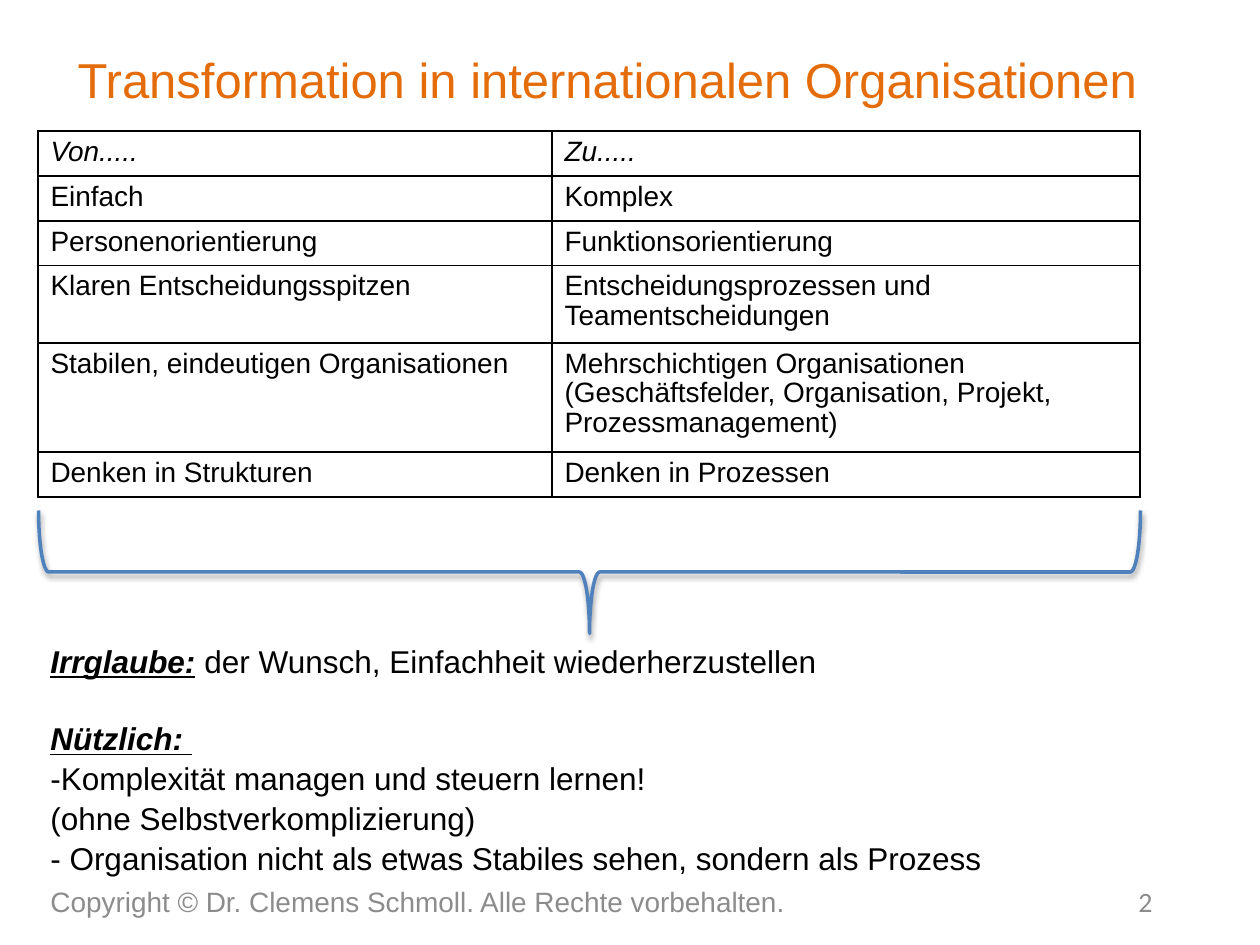
import pptx
import pptx.util
import pptx.oxml
from lxml import etree
from pptx.dml.color import RGBColor
from pptx.enum.shapes import MSO_SHAPE
from pptx.enum.text import MSO_ANCHOR, PP_ALIGN
from pptx.oxml.ns import nsdecls

PX = 914400 // 126
ORANGE = RGBColor(0xE4, 0x6C, 0x0A)
GRAY = RGBColor(0x8C, 0x8C, 0x8C)
BLACK = RGBColor(0, 0, 0)
BLUE = RGBColor(0x4F, 0x81, 0xBD)

LEFT, WIDTH = 38, 1102
TITLE = "Transformation in internationalen Organisationen "
COPYRIGHT = "Copyright © Dr. Clemens Schmoll. Alle Rechte vorbehalten."
PAGE_NUMBER = "2"
COLUMN_WIDTHS = [514, 588]
ROWS = [
    (40, "Von.....", "Zu....."),
    (40, "Einfach", "Komplex"),
    (40, "Personenorientierung", "Funktionsorientierung"),
    (71, "Klaren Entscheidungsspitzen", "Entscheidungsprozessen und Teamentscheidungen"),
    (100, "Stabilen, eindeutigen Organisationen",
     "Mehrschichtigen Organisationen\n"
     "(Geschäftsfelder, Organisation, Projekt, Prozessmanagement)"),
    (40, "Denken in Strukturen", "Denken in Prozessen"),
]
# Each conclusion: emphasised lead, plain text, space before in points
CONCLUSIONS = [
    ("Irrglaube:", " der Wunsch, Einfachheit wiederherzustellen", 0),
    ("Nützlich: ", "", 21.6),
    ("", "-Komplexität managen und steuern lernen!\v(ohne Selbstverkomplizierung)", 0),
    ("", "- Organisation nicht als etwas Stabiles sehen, sondern als Prozess", 0),
]


def px(*values):
    return [pptx.util.Emu(value * PX) for value in values]


def add_text(paragraph, text, size=16, color=BLACK, font="Arial",
             italic=False, bold=False, underline=False):
    """Append text to a paragraph; a vertical tab breaks the line."""
    for index, line in enumerate(text.split("\v")):
        if index:
            paragraph.add_line_break()
        run = paragraph.add_run()
        run.text = line
        run.font.name = font
        run.font.size = pptx.util.Pt(size)
        run.font.color.rgb = color
        run.font.italic, run.font.bold, run.font.underline = italic, bold, underline


def add_box(slide, box, anchor=MSO_ANCHOR.MIDDLE):
    frame = slide.shapes.add_textbox(*px(*box)).text_frame
    frame.word_wrap = True
    frame.vertical_anchor = anchor
    return frame


def add_line(slide, box, text, align=PP_ALIGN.LEFT, **text_format):
    paragraph = add_box(slide, box).paragraphs[0]
    paragraph.alignment = align
    add_text(paragraph, text, **text_format)


def add_borders(cell):
    properties = cell._tc.get_or_add_tcPr()
    for position, side in enumerate(("lnL", "lnR", "lnT", "lnB")):
        properties.insert(position, pptx.oxml.parse_xml(
            f'<a:{side} {nsdecls("a")} w="12700"><a:solidFill>'
            f'<a:srgbClr val="{BLACK}"/></a:solidFill></a:{side}>'))


def add_comparison(slide):
    height = sum(row[0] for row in ROWS)
    table = slide.shapes.add_table(
        len(ROWS), len(COLUMN_WIDTHS), *px(LEFT, 131, WIDTH, height)).table
    table.first_row = table.horz_banding = False
    for column, width in zip(table.columns, COLUMN_WIDTHS):
        column.width = px(width)[0]
    for row_index, (row_height, *texts) in enumerate(ROWS):
        table.rows[row_index].height = px(row_height)[0]
        for column_index, text in enumerate(texts):
            cell = table.cell(row_index, column_index)
            cell.fill.background()
            add_borders(cell)
            for index, line in enumerate(text.split("\n")):
                frame = cell.text_frame
                paragraph = frame.add_paragraph() if index else frame.paragraphs[0]
                paragraph.line_spacing = 0.96
                add_text(paragraph, line, italic=row_index == 0)


def add_brace(slide):
    """Add a right brace turned to point down from the table."""
    depth, center_x, center_y = 123, LEFT + WIDTH // 2, 572
    brace = slide.shapes.add_shape(MSO_SHAPE.RIGHT_BRACE, *px(
        center_x - depth // 2, center_y - WIDTH // 2, depth, WIDTH))
    brace.rotation = 90
    brace.fill.background()
    brace.line.color.rgb = BLUE
    brace.line.width = pptx.util.Pt(2)
    brace.shadow.inherit = False
    effects = brace._element.spPr.find(pptx.oxml.ns.qn("a:effectLst"))
    effects.append(pptx.oxml.parse_xml(
        f'<a:outerShdw {nsdecls("a")} blurRad="40000" dist="20000" dir="5400000" '
        f'rotWithShape="0"><a:srgbClr val="{BLACK}"><a:alpha val="38000"/>'
        '</a:srgbClr></a:outerShdw>'))


def add_conclusions(slide):
    frame = add_box(slide, (LEFT, 634, WIDTH, 242), MSO_ANCHOR.TOP)
    for index, (lead, text, space) in enumerate(CONCLUSIONS):
        paragraph = frame.add_paragraph() if index else frame.paragraphs[0]
        paragraph.line_spacing = 1.05
        if space:
            paragraph.space_before = pptx.util.Pt(space)
        if lead:
            add_text(paragraph, lead, size=18, italic=True, bold=True, underline=True)
        if text:
            add_text(paragraph, text, size=18)


def main():
    presentation = pptx.Presentation()
    presentation.slide_width, presentation.slide_height = px(1260, 945)
    slide = presentation.slides.add_slide(presentation.slide_layouts[6])
    add_line(slide, (63, 0, WIDTH, 158), TITLE, PP_ALIGN.CENTER, size=28, color=ORANGE)
    add_line(slide, (LEFT, 876, 801, 50), COPYRIGHT, color=GRAY)
    add_line(slide, (872, 876, 293, 50), PAGE_NUMBER, PP_ALIGN.RIGHT,
             color=GRAY, font="Calibri")
    add_comparison(slide)
    add_brace(slide)
    add_conclusions(slide)
    presentation.save("out.pptx")


if __name__ == "__main__":
    main()
